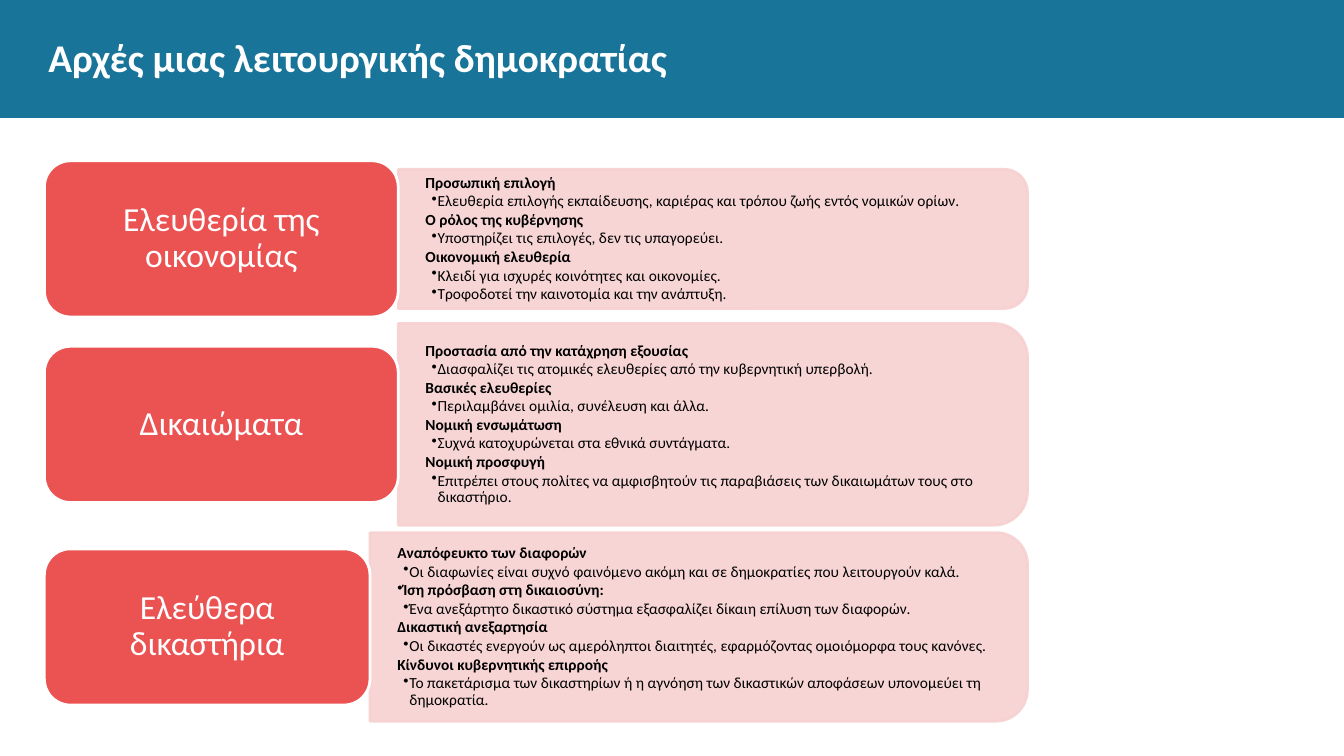
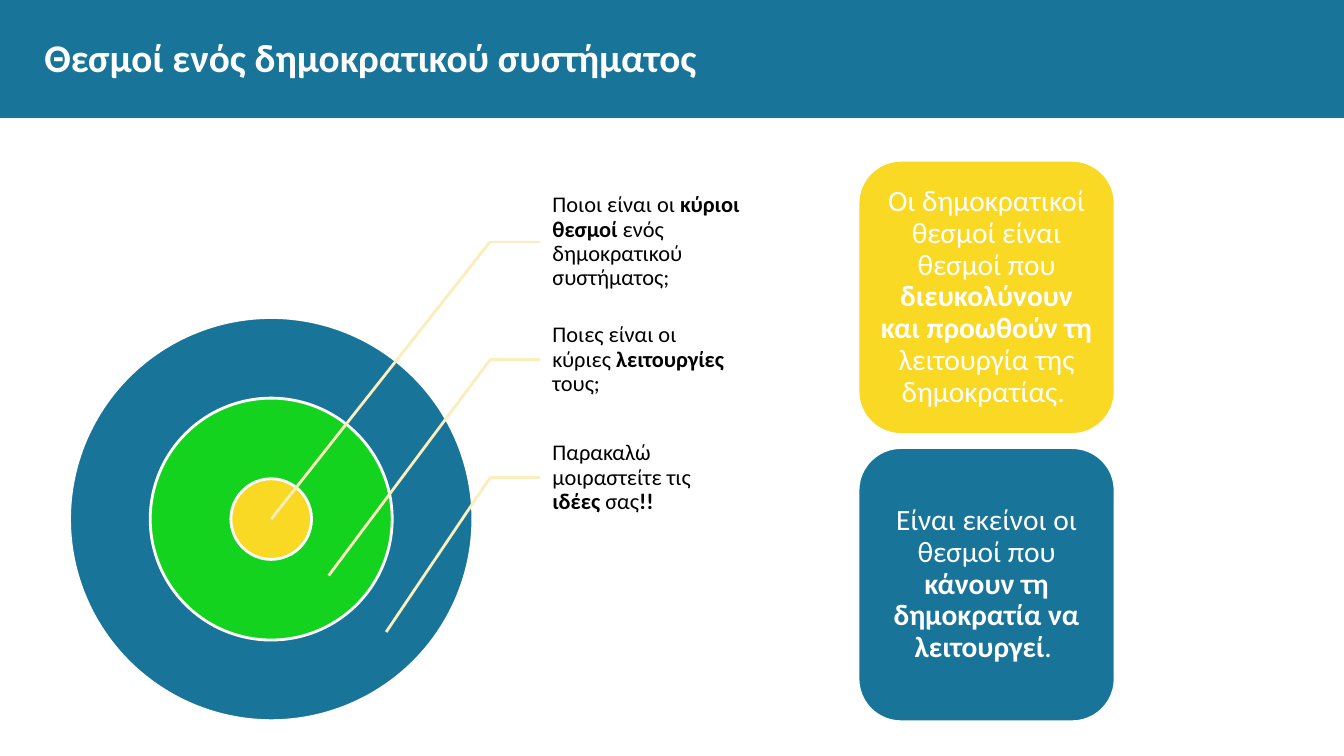
from lxml.etree import SubElement
from pptx import Presentation
from pptx.dml.color import RGBColor
from pptx.enum.shapes import MSO_CONNECTOR, MSO_SHAPE
from pptx.enum.text import MSO_ANCHOR, PP_ALIGN
from pptx.oxml.ns import qn
from pptx.util import Inches, Pt

BLUE, RED, PINK = "187498", "EB5353", "F7D1D1"
GREEN, YELLOW, CREAM = "13D31F", "F9D923", "FCEDBD"
WHITE, BLACK = "FFFFFF", "000000"
FONT = "Calibri"
LEFT = 0.44
PANEL_RIGHT = 10.19
LABEL_HEIGHT = 1.55

HEADING, BULLET, BULLET_HEADING = "heading", "bullet", "bullet heading"

PRINCIPLES = [
    ("Ελευθερία της οικονομίας", 3.51, 2.37, 1.38, [
        (HEADING, "Προσωπική επιλογή"),
        (BULLET, "Ελευθερία επιλογής εκπαίδευσης, καριέρας και τρόπου ζωής εντός νομικών ορίων."),
        (HEADING, "Ο ρόλος της κυβέρνησης"),
        (BULLET, "Υποστηρίζει τις επιλογές, δεν τις υπαγορεύει."),
        (HEADING, "Οικονομική ελευθερία"),
        (BULLET, "Κλειδί για ισχυρές κοινότητες και οικονομίες."),
        (BULLET, "Τροφοδοτεί την καινοτομία και την ανάπτυξη."),
    ]),
    ("Δικαιώματα", 3.51, 4.21, 2, [
        (HEADING, "Προστασία από την κατάχρηση εξουσίας"),
        (BULLET, "Διασφαλίζει τις ατομικές ελευθερίες από την κυβερνητική υπερβολή."),
        (HEADING, "Βασικές ελευθερίες"),
        (BULLET, "Περιλαμβάνει ομιλία, συνέλευση και άλλα."),
        (HEADING, "Νομική ενσωμάτωση"),
        (BULLET, "Συχνά κατοχυρώνεται στα εθνικά συντάγματα."),
        (HEADING, "Νομική προσφυγή"),
        (BULLET, "Επιτρέπει στους πολίτες να αμφισβητούν τις παραβιάσεις "
                 "των δικαιωμάτων τους στο δικαστήριο."),
    ]),
    ("Ελεύθερα δικαστήρια", 3.23, 6.22, 1.87, [
        (HEADING, "Αναπόφευκτο των διαφορών"),
        (BULLET, "Οι διαφωνίες είναι συχνό φαινόμενο ακόμη και σε δημοκρατίες που λειτουργούν καλά."),
        (BULLET_HEADING, "Ίση πρόσβαση στη δικαιοσύνη:"),
        (BULLET, "Ένα ανεξάρτητο δικαστικό σύστημα εξασφαλίζει δίκαιη επίλυση των διαφορών."),
        (HEADING, "Δικαστική ανεξαρτησία"),
        (BULLET, "Οι δικαστές ενεργούν ως αμερόληπτοι διαιτητές, εφαρμόζοντας ομοιόμορφα τους κανόνες."),
        (HEADING, "Κίνδυνοι κυβερνητικής επιρροής"),
        (BULLET, "Το πακετάρισμα των δικαστηρίων ή η αγνόηση των δικαστικών "
                 "αποφάσεων υπονομεύει τη δημοκρατία."),
    ]),
]

QUESTIONS = [
    [("Ποιοι είναι οι ", False), ("κύριοι θεσμοί ", True),
     ("ενός δημοκρατικού συστήματος;", False)],
    [("Ποιες είναι οι κύριες ", False), ("λειτουργίες ", True), ("τους;", False)],
    [("Παρακαλώ μοιραστείτε τις ", False), ("ιδέες ", True), ("σας", False), ("!!", True)],
]

CARDS = [
    (YELLOW, [("Οι δημοκρατικοί θεσμοί είναι θεσμοί που ", False),
              ("διευκολύνουν και προωθούν τη ", True),
              ("λειτουργία της δημοκρατίας. ", False)]),
    (BLUE, [("Είναι εκείνοι οι θεσμοί που ", False),
            ("κάνουν τη δημοκρατία να λειτουργεί", True), (". ", False)]),
]


def color(hex_string):
    """Turn a hex string into a colour."""
    return RGBColor.from_string(hex_string)


def add_box(slide, kind, left, top, width, height, fill, line=None):
    """Add a filled preset shape, outlined when a line colour is given."""
    shape = slide.shapes.add_shape(
        kind, Inches(left), Inches(top), Inches(width), Inches(height))
    shape.shadow.inherit = False
    shape.fill.solid()
    shape.fill.fore_color.rgb = color(fill)
    if line:
        shape.line.color.rgb = color(line)
        shape.line.width = Pt(2)
    else:
        shape.line.fill.background()
    return shape


def add_text_box(slide, left, top, width, height):
    """Add an empty text box."""
    return slide.shapes.add_textbox(
        Inches(left), Inches(top), Inches(width), Inches(height))


def prepare_frame(shape, margins):
    """Wrap and centre the text vertically, with left, top, right, bottom margins."""
    frame = shape.text_frame
    frame.word_wrap = True
    frame.vertical_anchor = MSO_ANCHOR.MIDDLE
    (frame.margin_left, frame.margin_top,
     frame.margin_right, frame.margin_bottom) = map(Inches, margins)
    return frame


def add_runs(paragraph, runs, size, text_color, align=PP_ALIGN.LEFT, spacing=0.9):
    """Fill a paragraph with (text, bold) runs."""
    paragraph.alignment = align
    paragraph.line_spacing = spacing
    for text, bold in runs:
        run = paragraph.add_run()
        run.text = text
        run.font.name = FONT
        run.font.size = Pt(size)
        run.font.bold = bold
        run.font.color.rgb = color(text_color)


def set_indent(paragraph, level, bullet):
    """Hang a paragraph at its level, with or without a bullet."""
    properties = paragraph._p.get_or_add_pPr()
    properties.set("marL", str(Inches(0.06 * level)))
    properties.set("indent", str(Inches(-0.06)))
    if bullet:
        SubElement(properties, qn("a:buChar"), char="•")
    else:
        SubElement(properties, qn("a:buNone"))


def make_translucent(shape):
    """Give the fill and line of a shape 90 percent opacity."""
    for solid in shape._element.spPr.iter(qn("a:solidFill")):
        SubElement(solid[0], qn("a:alpha"), val="90000")


def add_line(slide, start, end):
    """Draw a plain cream line between two points."""
    connector = slide.shapes.add_connector(
        MSO_CONNECTOR.STRAIGHT, *map(Inches, (*start, *end)))
    connector.line.color.rgb = color(CREAM)
    connector.line.width = Pt(2)
    SubElement(connector._element.spPr, qn("a:effectLst"))


def add_titled_slide(presentation, title, left):
    """Add a blank slide with the blue band and its title."""
    slide = presentation.slides.add_slide(presentation.slide_layouts[6])
    add_box(slide, MSO_SHAPE.RECTANGLE, 0, 0, 13.33, 1.17, BLUE)
    frame = prepare_frame(add_text_box(slide, left, 0.19, 12.46, 0.74), (0, 0, 0, 0))
    add_runs(frame.paragraphs[0], [(title, True)], 28, WHITE, spacing=1)
    return slide


def add_panel(slide, left, center, width, height, items):
    """Add a pink panel rounded on its right, with headings and bullets."""
    panel = add_box(slide, MSO_SHAPE.ROUND_2_SAME_RECTANGLE,
                    left + (width - height) / 2, center - width / 2,
                    height, width, PINK, PINK)
    panel.rotation = 90
    make_translucent(panel)
    inset = height * 0.05
    text_box = add_text_box(slide, left, center - height / 2 + inset,
                            width - inset, height - 2 * inset)
    frame = prepare_frame(text_box, (0.27, 0.14, 0.27, 0.14))
    for index, (kind, text) in enumerate(items):
        paragraph = frame.add_paragraph() if index else frame.paragraphs[0]
        add_runs(paragraph, [(text, kind != BULLET)], 11, BLACK)
        paragraph.space_after = Pt(1.4)
        set_indent(paragraph, 2 if kind == BULLET else 1, kind != HEADING)


def add_principle(slide, label, label_width, center, panel_height, items):
    """Add one row: a red label and the panel that explains it."""
    panel_left = LEFT + label_width
    add_panel(slide, panel_left, center, PANEL_RIGHT - panel_left, panel_height, items)
    shape = add_box(slide, MSO_SHAPE.ROUNDED_RECTANGLE, LEFT, center - LABEL_HEIGHT / 2,
                    label_width, LABEL_HEIGHT, RED, WHITE)
    frame = prepare_frame(shape, (0.1, 0.05, 0.1, 0.05))
    add_runs(frame.paragraphs[0], [(label, False)], 24, WHITE, PP_ALIGN.CENTER)


def add_target(slide, center_x, center_y):
    """Add three concentric circles and the questions that point at them."""
    for diameter, fill in ((4, BLUE), (2.4, GREEN), (0.8, YELLOW)):
        add_box(slide, MSO_SHAPE.OVAL, center_x - diameter / 2, center_y - diameter / 2,
                diameter, diameter, fill, WHITE)
    text_left, pitch = center_x + 2.67, 1.17
    for index, runs in enumerate(QUESTIONS):
        middle = center_y - 2.75 + index * pitch
        text_box = add_text_box(slide, text_left, middle - pitch / 2, 2, pitch)
        frame = prepare_frame(text_box, (0.12, 0.02, 0.02, 0.02))
        add_runs(frame.paragraphs[0], runs, 16, BLACK)
        elbow = (text_left - 0.5, middle)
        add_line(slide, elbow, (text_left, middle))
        add_line(slide, elbow, (center_x + 0.57 * index, center_y + 0.56 * index))


def add_cards(slide, left, top, width, height, gap):
    """Stack the coloured definition cards."""
    for index, (fill, runs) in enumerate(CARDS):
        card = add_box(slide, MSO_SHAPE.ROUNDED_RECTANGLE, left,
                       top + index * (height + gap), width, height, fill, WHITE)
        frame = prepare_frame(card, (0.09, 0.04, 0.09, 0.04))
        add_runs(frame.paragraphs[0], runs, 21, WHITE, PP_ALIGN.CENTER)


def build_principles(presentation):
    """Build the slide on the principles of democracy."""
    slide = add_titled_slide(presentation, "Αρχές μιας λειτουργικής δημοκρατίας", 0.48)
    for principle in PRINCIPLES:
        add_principle(slide, *principle)


def build_institutions(presentation):
    """Build the slide on democratic institutions."""
    slide = add_titled_slide(presentation, "Θεσμοί ενός δημοκρατικού συστήματος", LEFT)
    add_target(slide, 2.69, 5.15)
    add_cards(slide, 8.51, 1.59, 2.55, 2.72, 0.13)


def main():
    """Build and save the presentation."""
    presentation = Presentation()
    presentation.slide_width = Inches(13.33)
    presentation.slide_height = Inches(7.5)
    build_principles(presentation)
    build_institutions(presentation)
    presentation.save("out.pptx")


if __name__ == "__main__":
    main()
